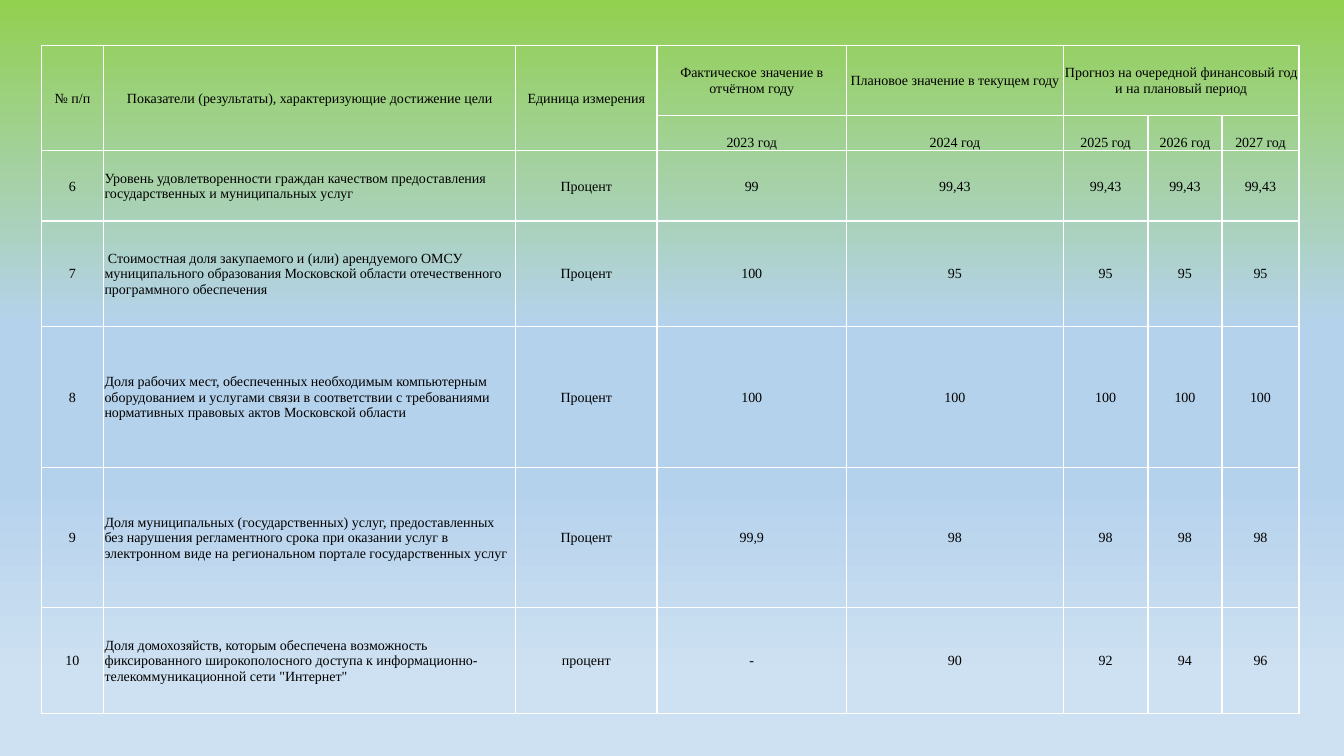
"""Build a slide with a table of programme indicators, rows 6 to 10."""
from lxml import etree
from pptx import Presentation
from pptx.dml.color import RGBColor
from pptx.enum import text
from pptx.oxml import ns
from pptx.util import Pt

COLORS = {"green": "92D050", "blue": "B5D2EC", "pale": "CEE1F2", "line": "FFFFFF", "ink": "000000"}


def add_color(parent, color):
    etree.SubElement(parent, ns.qn("a:srgbClr"), val=COLORS[color])


def add_borders(cell):
    properties = cell._tc.get_or_add_tcPr()
    for side in ("lnL", "lnR", "lnT", "lnB"):
        border = etree.SubElement(properties, ns.qn(f"a:{side}"), w=str(Pt(1)))
        add_color(etree.SubElement(border, ns.qn("a:solidFill")), "line")


deck = Presentation()
deck.slide_width, deck.slide_height = Pt(960), Pt(540)
slide = deck.slides.add_slide(deck.slide_layouts[6])

backdrop = slide.background.fill
backdrop.gradient()
backdrop.gradient_angle = 270
stops = slide.background._cSld.find(".//" + ns.qn("a:gsLst"))
for stop in list(stops):
    stops.remove(stop)
for percent, color in [(0, "green"), (43, "blue"), (64, "blue"), (90, "pale")]:
    add_color(etree.SubElement(stops, ns.qn("a:gs"), pos=str(percent * 1000)), color)

header = [
    ["№ п/п", "Показатели (результаты), характеризующие достижение цели", "Единица измерения",
     "Фактическое значение в отчётном году", "Плановое значение в текущем году",
     "Прогноз на очередной финансовый год и на плановый период", "", ""],
    ["", "", ""] + [f"{year} год" for year in range(2023, 2028)],
]
indicators = [
    ["6", "Уровень удовлетворенности граждан качеством предоставления государственных и "
     "муниципальных услуг", "Процент", "99", "99,43", "99,43", "99,43", "99,43"],
    ["7", " Стоимостная доля закупаемого и (или) арендуемого ОМСУ муниципального образования "
     "Московской области отечественного программного обеспечения",
     "Процент", "100", "95", "95", "95", "95"],
    ["8", "Доля рабочих мест, обеспеченных необходимым компьютерным оборудованием и услугами связи "
     "в соответствии с требованиями нормативных правовых актов Московской области",
     "Процент", "100", "100", "100", "100", "100"],
    ["9", "Доля муниципальных (государственных) услуг, предоставленных без нарушения регламентного "
     "срока при оказании услуг в электронном виде на региональном портале государственных услуг",
     "Процент", "99,9", "98", "98", "98", "98"],
    ["10", "Доля домохозяйств, которым обеспечена возможность фиксированного широкополосного доступа "
     "к информационно-телекоммуникационной сети \"Интернет\"",
     "процент", "-", "90", "92", "94", "96"],
]
rows = header + indicators
column_widths = [44.5, 294.3, 101, 135.4, 154.8, 60.5, 52.9, 55]
row_units = [2, 1, 2, 3, 4, 4, 3]
row_unit = 25.12

table = slide.shapes.add_table(len(rows), len(column_widths), Pt(29.5), Pt(32.3),
                               Pt(sum(column_widths)), Pt(row_unit * sum(row_units))).table
table.first_row = table.horz_banding = False
for column, width in zip(table.columns, column_widths):
    column.width = Pt(width)
for row, units in zip(table.rows, row_units):
    row.height = Pt(row_unit * units)

for r, values in enumerate(rows):
    for c, value in enumerate(values):
        cell = table.cell(r, c)
        add_borders(cell)
        cell.fill.background()
        cell.margin_left = cell.margin_right = cell.margin_top = Pt(0.7)
        cell.margin_bottom = 0
        cell.vertical_anchor = text.MSO_ANCHOR.BOTTOM if r == 1 else text.MSO_ANCHOR.MIDDLE
        cell.text = value
        paragraph = cell.text_frame.paragraphs[0]
        is_indicator = c == 1 and r >= len(header)
        paragraph.alignment = text.PP_ALIGN.LEFT if is_indicator else text.PP_ALIGN.CENTER
        paragraph.font.name = "Times New Roman"
        paragraph.font.size = Pt(10)
        paragraph.font.color.rgb = RGBColor.from_string(COLORS["ink"])

for c in range(3):
    table.cell(0, c).merge(table.cell(1, c))
table.cell(0, 5).merge(table.cell(0, 7))

deck.save("out.pptx")
